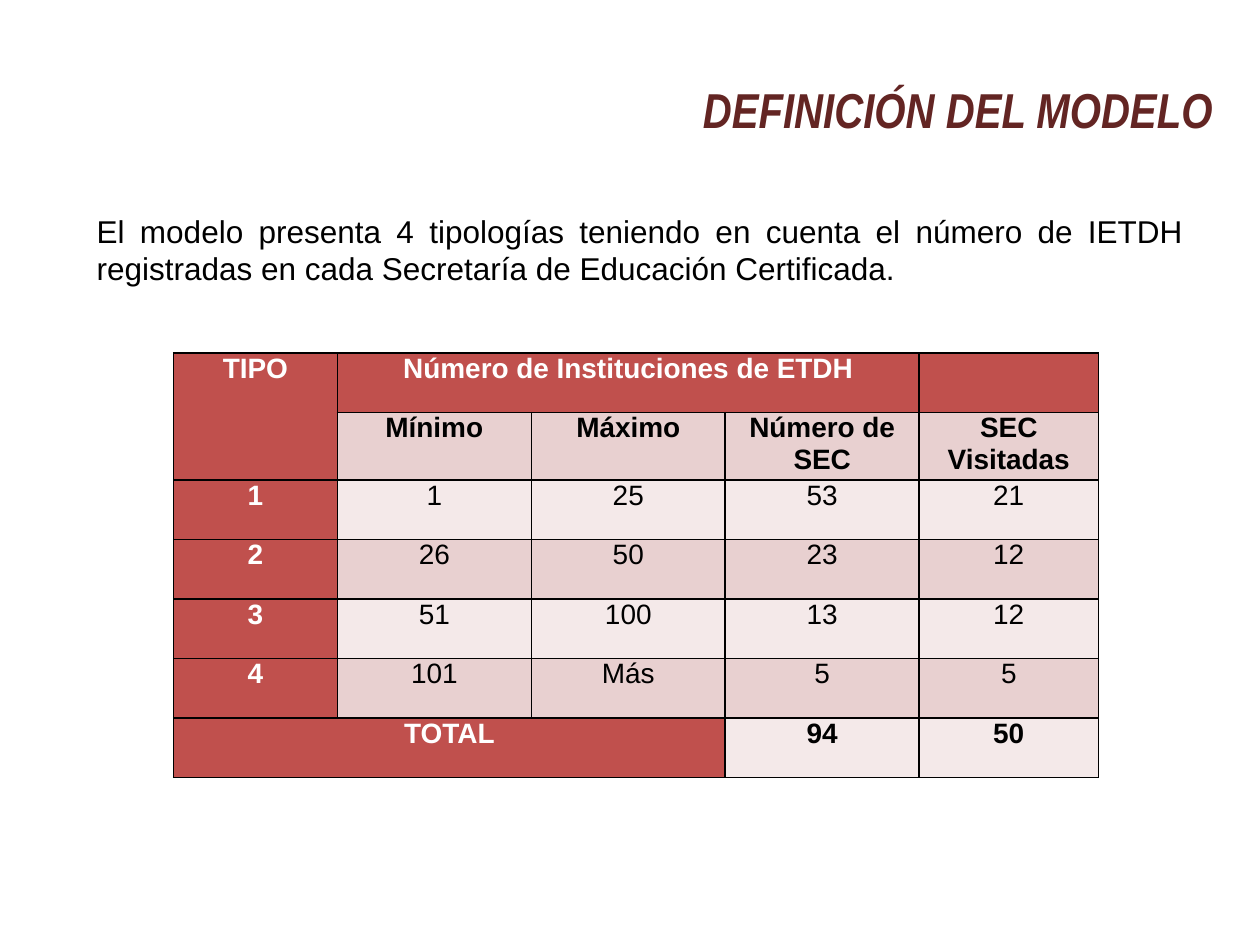
from pptx import Presentation
from pptx.dml.color import RGBColor
from pptx.enum.text import MSO_ANCHOR, MSO_AUTO_SIZE, PP_ALIGN
from pptx.oxml import parse_xml
from pptx.oxml.ns import nsdecls
from pptx.util import Cm, Pt

TITLE = "DEFINICIÓN DEL MODELO"
INTRO = ("El modelo presenta 4 tipologías teniendo en cuenta el número de IETDH "
         "registradas en cada Secretaría de Educación Certificada.")
ROWS = [
    ["TIPO", "Número de Instituciones de ETDH", "", "", ""],
    ["", "Mínimo", "Máximo", "Número de SEC", "SEC Visitadas"],
    ["1", "1", "25", "53", "21"],
    ["2", "26", "50", "23", "12"],
    ["3", "51", "100", "13", "12"],
    ["4", "101", "Más", "5", "5"],
    ["TOTAL", "", "", "94", "50"],
]
SPANS = [((0, 0), (1, 0)), ((0, 1), (0, 3)), ((6, 0), (6, 2))]
COLS = [3.3, 3.91, 3.91, 3.91, 3.61]
HIGH = 1.2

THEME = {
    "red": "C0504D",
    "bands": ["F4E9E9", "E8D0D0"],
    "line": "000000",
    "title": {"name": "Arial Narrow", "size": Pt(28), "bold": True,
              "italic": True, "color": "632523"},
    "intro": {"name": "Arial", "size": Pt(18), "color": "000000"},
    "head": {"name": "Arial", "size": Pt(16), "bold": True, "color": "FFFFFF"},
    "bold": {"name": "Arial", "size": Pt(16), "bold": True, "color": "000000"},
    "cell": {"name": "Arial", "size": Pt(16), "bold": False, "color": "000000"},
}


def write(frame, text, style, align):
    para = frame.paragraphs[0]
    para.alignment = align
    run = para.add_run()
    run.text = text
    for key, value in THEME[style].items():
        if key == "color":
            run.font.color.rgb = RGBColor.from_string(value)
        else:
            setattr(run.font, key, value)


def border(cell):
    props = cell._tc.get_or_add_tcPr()
    for spot, side in enumerate("LRTB"):
        props.insert(spot, parse_xml(
            f'<a:ln{side} {nsdecls("a")} w="12700"><a:solidFill>'
            f'<a:srgbClr val="{THEME["line"]}"/></a:solidFill></a:ln{side}>'))


def dress(cell, row, col, text):
    head = row == 0 or col == 0 or (row == 6 and col < 3)
    style = "head" if head else "bold" if row in (1, 6) else "cell"
    fill = THEME["red"] if head else THEME["bands"][row % 2]
    cell.fill.solid()
    cell.fill.fore_color.rgb = RGBColor.from_string(fill)
    sides = {"margin_left": Cm(0.18), "margin_right": Cm(0.18),
             "margin_top": 0, "margin_bottom": 0}
    for key, value in sides.items():
        setattr(cell, key, value)
    border(cell)
    if text:
        write(cell.text_frame, text, style, PP_ALIGN.CENTER)


def main():
    deck = Presentation()
    deck.slide_width, deck.slide_height = Cm(25.4), Cm(19.05)
    slide = deck.slides.add_slide(deck.slide_layouts[5])

    title = slide.shapes.title
    place = {"left": 11.71, "top": 1.12, "width": 15.19, "height": 2.16}
    for key, value in place.items():
        setattr(title, key, Cm(value))
    title.text_frame.vertical_anchor = MSO_ANCHOR.MIDDLE
    write(title.text_frame, TITLE, "title", PP_ALIGN.CENTER)

    intro = slide.shapes.add_textbox(Cm(1.7), Cm(4.14), Cm(22.4), Cm(1.8))
    intro.text_frame.word_wrap = True
    intro.text_frame.auto_size = MSO_AUTO_SIZE.SHAPE_TO_FIT_TEXT
    write(intro.text_frame, INTRO, "intro", PP_ALIGN.JUSTIFY)

    table = slide.shapes.add_table(
        len(ROWS), len(COLS), Cm(3.5), Cm(7.12),
        Cm(sum(COLS)), Cm(HIGH * len(ROWS))).table
    for col, width in zip(table.columns, COLS):
        col.width = Cm(width)
    for row, texts in enumerate(ROWS):
        table.rows[row].height = Cm(HIGH)
        for col, text in enumerate(texts):
            dress(table.cell(row, col), row, col, text)
    for start, end in SPANS:
        table.cell(*start).merge(table.cell(*end))

    deck.save("out.pptx")


if __name__ == "__main__":
    main()
